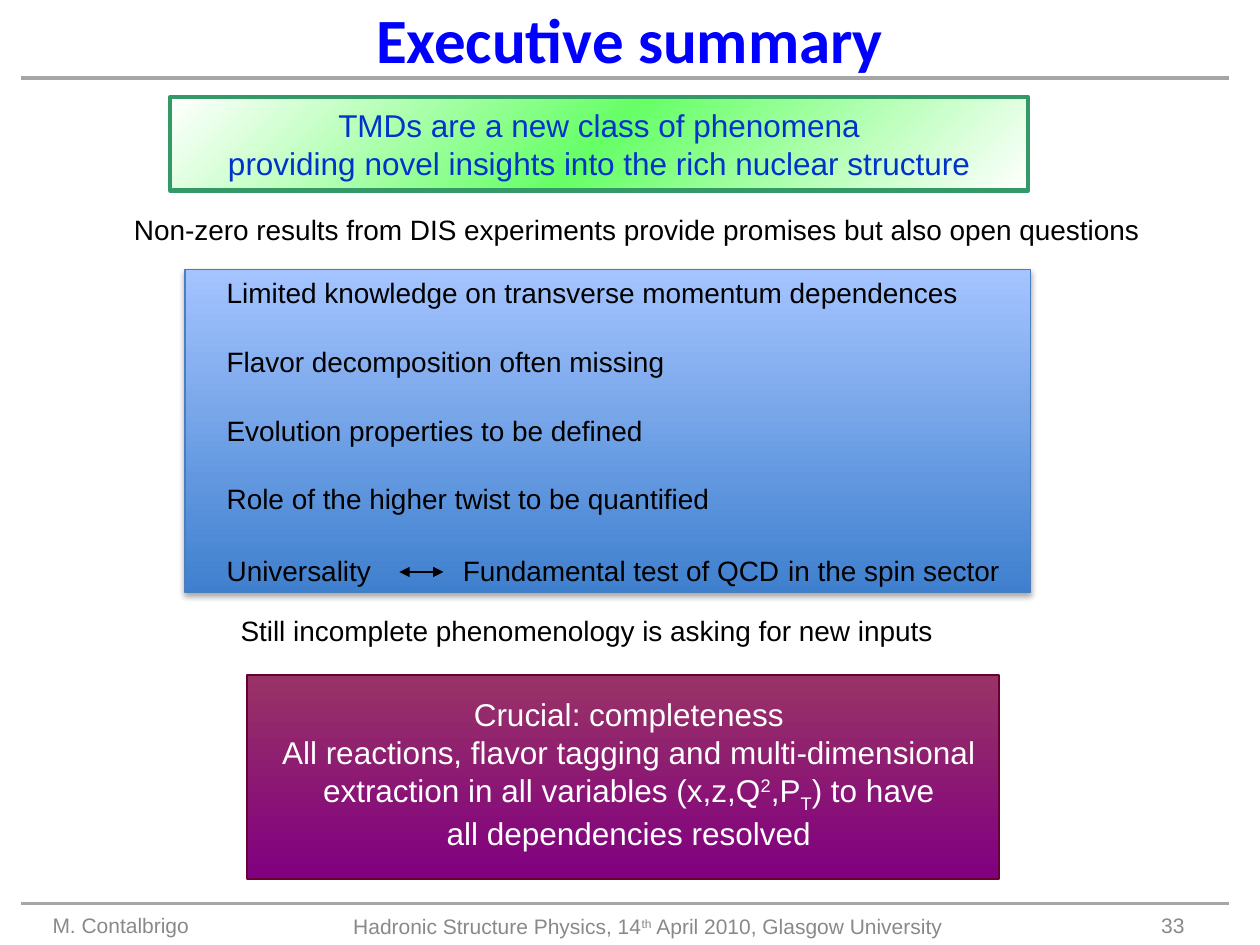
from lxml.etree import SubElement
from pptx import Presentation
from pptx.dml.color import RGBColor
from pptx.enum.shapes import MSO_CONNECTOR, MSO_SHAPE
from pptx.enum.text import MSO_ANCHOR, PP_ALIGN
from pptx.oxml import parse_xml
from pptx.oxml.ns import nsdecls, qn
from pptx.util import Cm, Pt

LEFT, CENTER, RIGHT = PP_ALIGN.LEFT, PP_ALIGN.CENTER, PP_ALIGN.RIGHT
TOP, MIDDLE, BOTTOM = MSO_ANCHOR.TOP, MSO_ANCHOR.MIDDLE, MSO_ANCHOR.BOTTOM
BLACK, GREY = "000000", "898989"

# Content: a paragraph is a list of (text, changes) runs
TITLE = [[("Executive summary", {})]]
HEADLINE = [
    [("TMDs are a new class of phenomena", {})],
    [("providing novel insights into the rich nuclear structure", {})],
]
RESULTS = [[("Non-zero results from DIS experiments provide promises "
             "but also open questions", {})]]
QUESTIONS = [
    [("Limited knowledge on transverse momentum dependences", {})],
    [("Flavor decomposition often missing", {})],
    [("Evolution properties to be defined", {})],
    [("Role of the higher twist to be quantified", {})],
    [("Universality\tFundamental test of QCD", {}), (" ", {"size": 18}),
     ("in the spin sector", {})],
]
INPUTS = [[("Still incomplete phenomenology is asking for new inputs", {})]]
CRUCIAL = [
    [("Crucial: completeness", {})],
    [("All reactions, flavor tagging and multi-dimensional", {})],
    [("extraction in all variables (x,z,Q", {}), ("2", {"base": 30}),
     (",P", {}), ("T", {"base": -25}), (") to have", {})],
    [("all dependencies resolved", {})],
]
AUTHOR = [[("M. Contalbrigo", {})]]
EVENT = [[("Hadronic Structure Physics, 14", {}), ("th", {"base": 30}),
          (" April 2010, Glasgow University", {})]]
NUMBER = [[("33", {})]]

# Panels: place in cm, gradient stops, angle, outline, outline width
PANELS = {
    "headline": ((3.43, 1.96, 17.3, 1.88),
                 [(0, "FFFFFF"), (50, "66FF66"), (100, "FFFFFF")], 45, "339966", 2.5),
    "questions": ((3.73, 5.44, 17.04, 6.5),
                  [(0, "3F80CE"), (100, "A4C4FF")], 270, "4B7EBC", 0.75),
    "crucial": ((4.98, 13.61, 15.16, 4.11),
                [(0, "993366"), (100, "800080")], 90, "660033", 1),
}

# Texts: paragraphs, place in cm, size, colour, alignment, anchor
TEXTS = [
    (HEADLINE, PANELS["headline"][0], 18, "0033CC", CENTER, MIDDLE),
    (RESULTS, (1.55, 4.17, 22.58, 0.94), 16, BLACK, CENTER, TOP),
    (INPUTS, (4.6, 12.24, 17.96, 0.94), 16, BLACK, LEFT, TOP),
    (CRUCIAL, (4.57, 13.89, 16.21, 3.33), 18, "FFFFFF", CENTER, TOP),
    (NUMBER, (18.21, 18.01, 5.92, 1.02), 12, GREY, RIGHT, BOTTOM),
    (EVENT, (4.88, 18.03, 16.36, 1.02), 12, GREY, CENTER, BOTTOM),
    (AUTHOR, (0.81, 18.01, 5.92, 1.02), 12, GREY, LEFT, BOTTOM),
]


def color(value):
    return RGBColor.from_string(value)


def add_panel(page, place, stops, angle, outline, width):
    panel = page.shapes.add_shape(MSO_SHAPE.RECTANGLE, *map(Cm, place))
    stop_xml = "".join(f'<a:gs pos="{pos * 1000}"><a:srgbClr val="{value}"/></a:gs>'
                       for pos, value in stops)
    gradient = parse_xml(f'<a:gradFill {nsdecls("a")} rotWithShape="1"><a:gsLst>{stop_xml}'
                         f'</a:gsLst><a:lin ang="{angle * 60000}" scaled="0"/></a:gradFill>')
    panel._element.spPr.find(qn("a:prstGeom")).addnext(gradient)
    panel.line.color.rgb = color(outline)
    panel.line.width = Pt(width)
    panel.shadow.inherit = False
    return panel


def add_drop_shadow(panel):
    effects = panel._element.spPr.find(qn("a:effectLst"))
    effects.append(parse_xml(
        f'<a:outerShdw {nsdecls("a")} blurRad="40000" dist="23000" dir="5400000" '
        'rotWithShape="0"><a:srgbClr val="000000"><a:alpha val="35000"/>'
        '</a:srgbClr></a:outerShdw>'))


def add_text(page, paragraphs, place, size, text_color, align, anchor,
             font="Arial", bold=False, gap=0, tab=None):
    box = page.shapes.add_textbox(*map(Cm, place))
    frame = box.text_frame
    frame.word_wrap = True
    frame.vertical_anchor = anchor
    for index, spans in enumerate(paragraphs):
        para = frame.paragraphs[0] if index == 0 else frame.add_paragraph()
        para.alignment = align
        if index and gap:
            para.space_before = Pt(gap)
        if tab:
            tabs = SubElement(para._p.get_or_add_pPr(), qn("a:tabLst"))
            SubElement(tabs, qn("a:tab"), pos=str(Cm(tab)), algn="l")
        for text, changes in spans:
            span = para.add_run()
            span.text = text
            span.font.name = font
            span.font.size = Pt(changes.get("size", size))
            span.font.bold = bold
            span.font.color.rgb = color(text_color)
            if "base" in changes:
                span.font._element.set("baseline", str(changes["base"] * 1000))


def add_line(page, left, right, y, line_color, width, arrows=False):
    line = page.shapes.add_connector(MSO_CONNECTOR.STRAIGHT, Cm(left), Cm(y), Cm(right), Cm(y))
    line.line.color.rgb = color(line_color)
    line.line.width = Pt(width)
    if arrows:
        for end in ("a:headEnd", "a:tailEnd"):
            SubElement(line.line._get_or_add_ln(), qn(end), type="triangle")
    SubElement(line._element.spPr, qn("a:effectLst"))


def main():
    deck = Presentation()
    deck.slide_width, deck.slide_height = Cm(25.4), Cm(19.05)
    page = deck.slides.add_slide(deck.slide_layouts[6])

    # Rules under the title and above the footer
    for y in (1.57, 18.21):
        add_line(page, 0.43, 24.77, y, "A6A6A6", 2)

    # Coloured panels
    panels = {name: add_panel(page, *panel) for name, panel in PANELS.items()}
    add_drop_shadow(panels["questions"])

    # Texts
    add_text(page, TITLE, (3.73, -0.2, 17.93, 1.96), 36, "0000FF", CENTER, MIDDLE,
             font="Calibri", bold=True)
    add_text(page, QUESTIONS, (4.32, 5.44, 16.99, 6.5), 16, BLACK, LEFT, TOP,
             gap=20, tab=4.76)
    for text in TEXTS:
        add_text(page, *text)

    # Arrow linking universality and the QCD test
    add_line(page, 8.05, 8.94, 11.53, BLACK, 1.5, arrows=True)

    deck.save("out.pptx")


if __name__ == "__main__":
    main()
